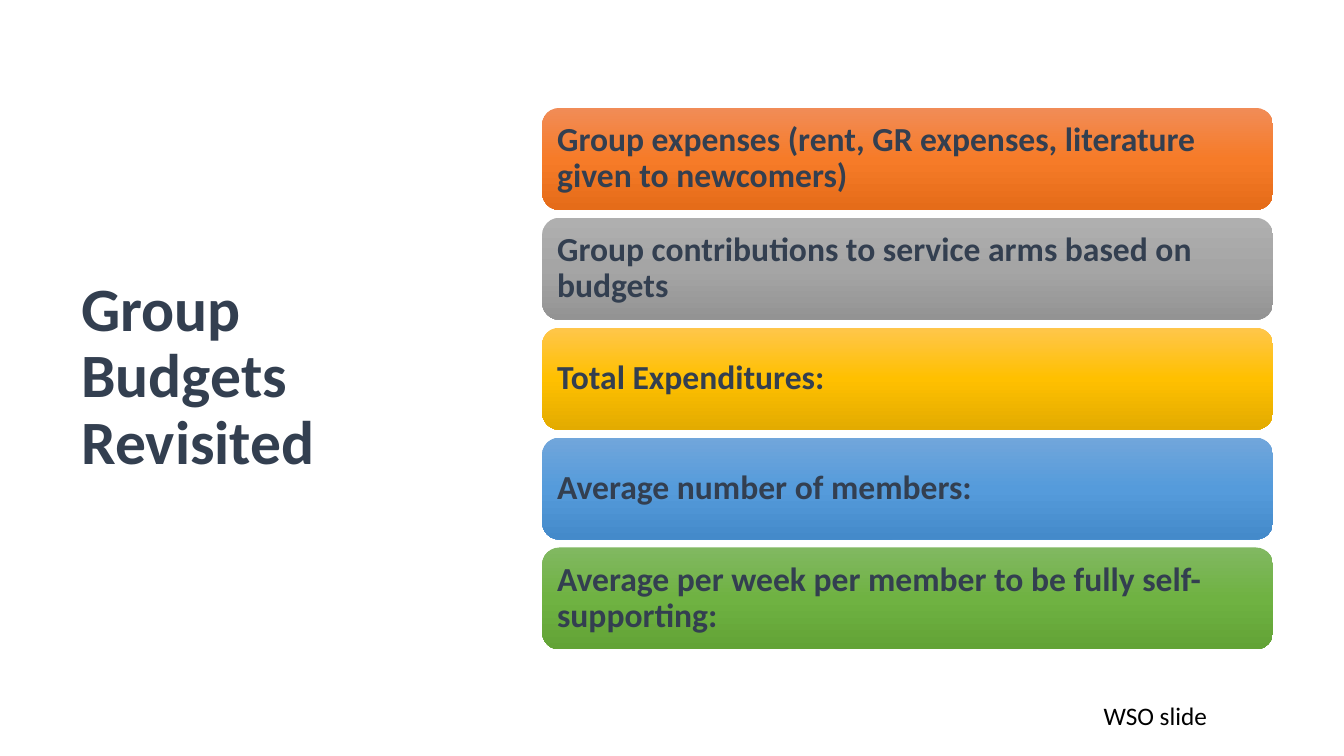
"""Builds the group budgets slide with a title and five gradient bars."""
from copy import deepcopy
from dataclasses import dataclass

from pptx import Presentation
from pptx.dml.color import RGBColor
from pptx.enum import shapes, text
from pptx.oxml.ns import qn
from pptx.util import Pt


@dataclass(frozen=True)
class Theme:
    font: str = "Calibri"
    ink: str = "333F50"
    black: str = "000000"
    title_size: int = 44
    bar_size: int = 24
    note_size: int = 18
    line_spacing: float = 0.9


@dataclass(frozen=True)
class Box:
    left: float
    top: float
    width: float
    height: float

    def lengths(self) -> tuple[Pt, Pt, Pt, Pt]:
        return Pt(self.left), Pt(self.top), Pt(self.width), Pt(self.height)


@dataclass(frozen=True)
class Bar:
    label: str
    colours: tuple[str, str, str]


THEME = Theme()
TITLE = Box(51, 108.7, 279.4, 322.6)
FIRST_BAR = Box(387.3, 77.1, 522, 72.8)
BAR_PITCH = 78.5
NOTE = Box(781.2, 496.8, 103, 28.8)
BARS = (
    Bar("Group expenses (rent, GR expenses, literature given to newcomers)",
        ("F18C57", "F67B28", "E56C19")),
    Bar("Group contributions to service arms based on budgets",
        ("AFAFAF", "A5A5A5", "939393")),
    Bar("Total Expenditures:", ("FFC64B", "FFC000", "E3AB00")),
    Bar("Average number of members:", ("71A6DB", "559BDB", "448ACA")),
    Bar("Average per week per member to be fully self-supporting:",
        ("81B861", "6FB242", "62A336")),
)


def write(tf, words: str, size: int, colour: str, bold: bool, spacing: float) -> None:
    tf.word_wrap = True
    p = tf.paragraphs[0]
    p.alignment = text.PP_ALIGN.LEFT
    p.line_spacing = spacing
    r = p.add_run()
    r.text = words
    r.font.name = THEME.font
    r.font.size = Pt(size)
    r.font.bold = bold
    r.font.color.rgb = RGBColor.from_string(colour)


def add_title(s, box: Box, words: str) -> None:
    sp = s.shapes.title
    sp.left, sp.top, sp.width, sp.height = box.lengths()
    tf = sp.text_frame
    tf.auto_size = text.MSO_AUTO_SIZE.NONE
    tf.vertical_anchor = text.MSO_ANCHOR.MIDDLE
    write(tf, words, THEME.title_size, THEME.ink, True, THEME.line_spacing)


def fill_gradient(sp, colours: tuple[str, ...]) -> None:
    sp.fill.gradient()
    sp.fill.gradient_angle = 270
    stops = sp._element.spPr.find(qn("a:gradFill")).find(qn("a:gsLst"))
    stops.append(deepcopy(stops[-1]))
    for i, (stop, colour) in enumerate(zip(sp.fill.gradient_stops, colours)):
        stop.position = i / (len(colours) - 1)
        stop.color.rgb = RGBColor.from_string(colour)


def add_bar(s, box: Box, bar: Bar) -> None:
    sp = s.shapes.add_shape(shapes.MSO_SHAPE.ROUNDED_RECTANGLE, *box.lengths())
    sp.shadow.inherit = False
    sp.line.fill.background()
    fill_gradient(sp, bar.colours)
    tf = sp.text_frame
    tf.margin_left = tf.margin_right = tf.margin_top = tf.margin_bottom = Pt(7.2)
    tf.vertical_anchor = text.MSO_ANCHOR.MIDDLE
    write(tf, bar.label, THEME.bar_size, THEME.ink, True, THEME.line_spacing)


def add_note(s, box: Box, words: str) -> None:
    tf = s.shapes.add_textbox(*box.lengths()).text_frame
    tf.auto_size = text.MSO_AUTO_SIZE.SHAPE_TO_FIT_TEXT
    write(tf, words, THEME.note_size, THEME.black, False, 1.0)


def main() -> None:
    prs = Presentation()
    prs.slide_width, prs.slide_height = Pt(960), Pt(540)
    s = prs.slides.add_slide(prs.slide_layouts[5])
    add_title(s, TITLE, "Group Budgets Revisited")
    for i, bar in enumerate(BARS):
        box = Box(FIRST_BAR.left, FIRST_BAR.top + i * BAR_PITCH,
                  FIRST_BAR.width, FIRST_BAR.height)
        add_bar(s, box, bar)
    add_note(s, NOTE, "WSO slide")
    prs.save("out.pptx")


if __name__ == "__main__":
    main()
